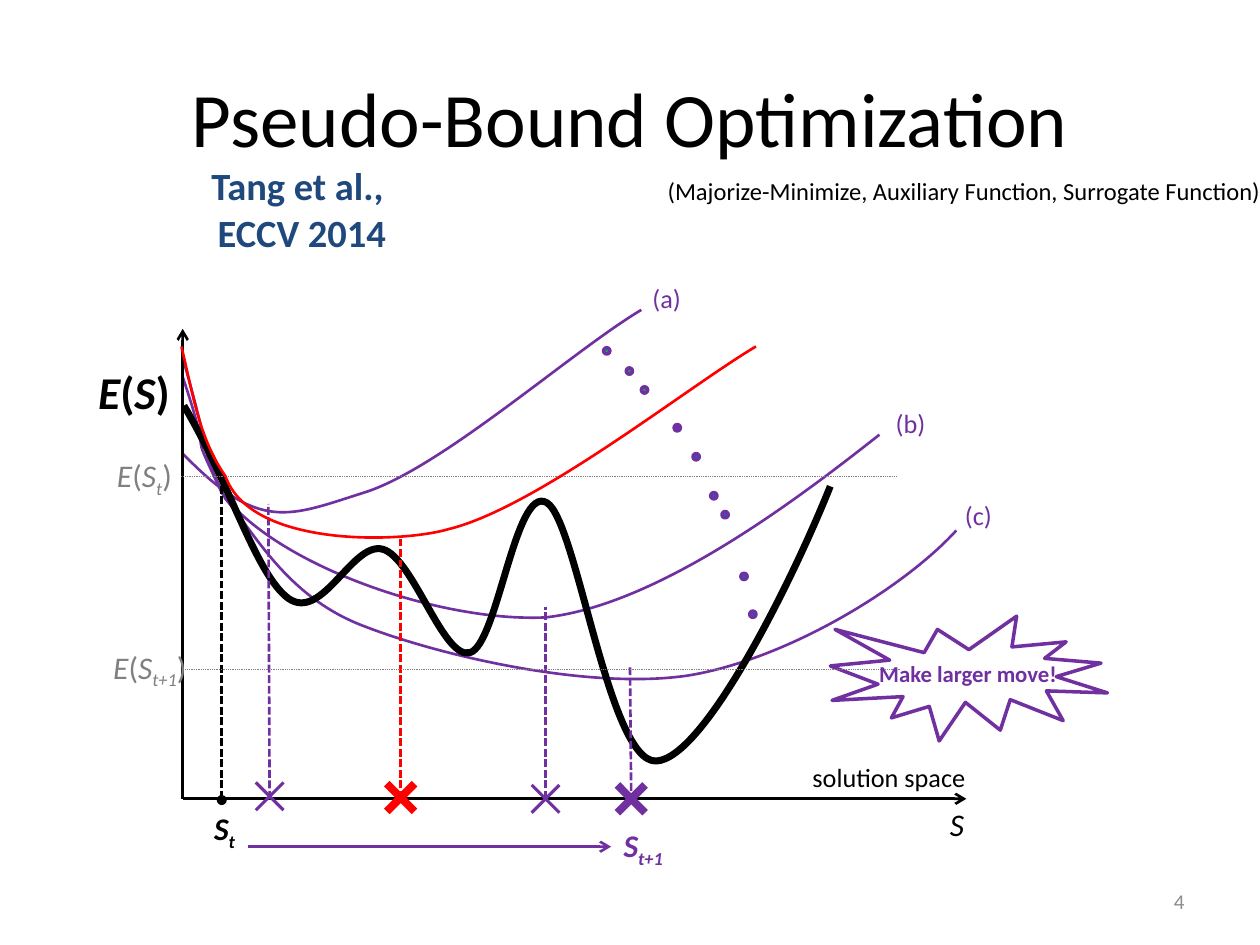
from dataclasses import dataclass

from lxml import etree
from pptx import Presentation
from pptx.dml.color import RGBColor
from pptx.enum.dml import MSO_LINE
from pptx.enum.shapes import MSO_CONNECTOR, MSO_SHAPE
from pptx.enum.text import MSO_ANCHOR, MSO_AUTO_SIZE, PP_ALIGN
from pptx.oxml.ns import qn
from pptx.util import Pt

PX = 9144  # 100 px to the inch
FONT = "Calibri"
BLACK, PURPLE, RED, GRAY = "000000", "7030A0", "FF0000", "808080"
GREEN, BLUE, NAVY, PALE = "00B050", "0070C0", "1F497D", "8C8C8C"
DASH, DOT = MSO_LINE.SQUARE_DOT, MSO_LINE.ROUND_DOT
STRAIGHT = MSO_CONNECTOR.STRAIGHT
OVAL, BURST = MSO_SHAPE.OVAL, MSO_SHAPE.EXPLOSION1
LEFT, CENTER, RIGHT = PP_ALIGN.LEFT, PP_ALIGN.CENTER, PP_ALIGN.RIGHT
TOP, MIDDLE = MSO_ANCHOR.TOP, MSO_ANCHOR.MIDDLE
GROW, FIXED = MSO_AUTO_SIZE.SHAPE_TO_FIT_TEXT, MSO_AUTO_SIZE.NONE
AXIS_Y = 634


@dataclass
class Run:
    text: str
    italic: bool = False
    subscript: bool = False


@dataclass
class Label:
    box: tuple[int, int, int, int]
    lines: list[list[Run]]
    size: int
    color: str = BLACK
    bold: bool = False
    align: PP_ALIGN = LEFT
    anchor: MSO_ANCHOR = TOP
    wrap: bool = False
    grow: bool = True


@dataclass
class Line:
    start: tuple[int, int]
    end: tuple[int, int]
    color: str
    width: float = 1.5
    dash: MSO_LINE | None = None
    arrow: bool = False


@dataclass
class Curve:
    points: list[tuple[int, int]]  # start, then three Bézier points a segment
    color: str
    width: float = 1.5


def rgb(color: str) -> RGBColor:
    return RGBColor.from_string(color)


def plain(text: str) -> list[list[Run]]:
    return [[Run(line)] for line in text.split("\n")]


def state(index: str) -> list[Run]:
    return [Run("S", True), Run(index, True, True)]


def energy(argument: list[Run]) -> list[list[Run]]:
    return [[Run("E", True), Run("("), *argument, Run(")")]]


def add_label(shapes, label: Label) -> None:
    shape = shapes.add_textbox(*(value * PX for value in label.box))
    frame = shape.text_frame
    frame.word_wrap = label.wrap
    frame.auto_size = GROW if label.grow else FIXED
    frame.vertical_anchor = label.anchor
    for index, runs in enumerate(label.lines):
        paragraph = frame.add_paragraph() if index else frame.paragraphs[0]
        paragraph.alignment = label.align
        font = paragraph.font
        font.name, font.size, font.bold = FONT, Pt(label.size), label.bold
        font.color.rgb = rgb(label.color)
        for part in runs:
            run = paragraph.add_run()
            run.text = part.text
            if part.italic:
                run.font.italic = True
            if part.subscript:
                run._r.get_or_add_rPr().set("baseline", "-25000")


def add_line(shapes, line: Line) -> None:
    ends = (value * PX for value in (*line.start, *line.end))
    connector = shapes.add_connector(STRAIGHT, *ends)
    connector.line.color.rgb = rgb(line.color)
    connector.line.width = Pt(line.width)
    if line.dash:
        connector.line.dash_style = line.dash
    if line.arrow:
        outline = connector.line._get_or_add_ln()
        etree.SubElement(outline, qn("a:tailEnd"), type="arrow")
    etree.SubElement(connector._element.spPr, qn("a:effectLst"))


def add_cross(shapes, x: int, y: int, color: str, width: float) -> None:
    half = 11
    for rise in (half, -half):
        add_line(shapes, Line((x - half, y - rise), (x + half, y + rise), color, width))


def add_curve(shapes, curve: Curve) -> None:
    builder = shapes.build_freeform(*curve.points[0], scale=PX)
    builder.add_line_segments(curve.points[1:], close=False)
    shape = builder.convert_to_shape()
    # Join each three straight segments into one cubic segment
    segments = list(shape._element.iter(qn("a:lnTo")))
    for first in range(0, len(segments), 3):
        cubic = etree.Element(qn("a:cubicBezTo"))
        segments[first].addprevious(cubic)
        for segment in segments[first:first + 3]:
            cubic.append(segment[0])
            segment.getparent().remove(segment)
    shape.shadow.inherit = False
    shape.fill.background()
    shape.line.color.rgb = rgb(curve.color)
    shape.line.width = Pt(curve.width)


def add_preset(shapes, kind: MSO_SHAPE, box: tuple[int, int, int, int],
               fill: str | None, outline: str | None) -> None:
    shape = shapes.add_shape(kind, *(value * PX for value in box))
    shape.shadow.inherit = False
    if fill:
        shape.fill.solid()
        shape.fill.fore_color.rgb = rgb(fill)
    else:
        shape.fill.background()
    if outline:
        shape.line.color.rgb = rgb(outline)
        shape.line.width = Pt(2)
    else:
        shape.line.fill.background()


HEADINGS = [
    Label((50, 30, 900, 125), plain("Pseudo-Bound Optimization"), 44,
          align=CENTER, anchor=MIDDLE, wrap=True, grow=False),
    Label((520, 135, 495, 34),
          plain("(Majorize-Minimize, Auxiliary Function, Surrogate Function)"), 14),
    Label((45, 124, 389, 83), plain("Tang et al., \nECCV 2014"), 22, NAVY, True,
          align=CENTER, wrap=True),
]
BOUNDS = [
    Curve([(145, 284), (173, 381), (155, 345), (179, 396), (203, 424), (228, 474), (289, 497),
           (351, 521), (469, 548), (547, 536), (625, 523), (717, 467), (759, 421)], PURPLE),
    Curve([(145, 360), (206, 423), (229, 410), (289, 391),
           (350, 372), (455, 278), (509, 246)], PURPLE),
    Curve([(145, 299), (173, 383), (145, 325), (176, 391), (218, 448), (348, 494), (433, 490),
           (524, 480), (637, 393), (698, 345)], PURPLE),
]
ENERGY_CURVE = Curve(
    [(146, 322), (183, 384), (203, 456), (229, 475), (256, 494), (280, 429), (304, 436),
     (328, 443), (352, 524), (373, 518), (395, 512), (409, 384), (434, 399),
     (458, 413), (483, 606), (521, 604), (559, 602), (629, 461), (659, 386)], BLACK, 4)
RED_BOUND = Curve([(144, 275), (153, 312), (158, 348), (179, 378), (199, 435), (319, 431),
                   (356, 420), (426, 403), (546, 307), (600, 275)], RED)
DOTS = [(479, 276, GREEN), (497, 292, GREEN), (509, 307, GREEN), (535, 337, PURPLE),
        (550, 360, BLUE), (564, 391, BLUE), (573, 406, BLUE), (588, 455, BLUE), (595, 485, BLUE)]
AXES = [Line((145, AXIS_Y), (767, AXIS_Y), BLACK, arrow=True),
        Line((145, AXIS_Y), (145, 261), BLACK, arrow=True)]
GUIDES = [
    Line((176, AXIS_Y), (176, 383), BLACK, dash=DASH),
    Line((214, AXIS_Y), (213, 400), PURPLE, dash=DASH),
    Line((501, 636), (500, 529), PURPLE, dash=DASH),
    Line((433, AXIS_Y), (433, 482), PURPLE, dash=DASH),
    Line((318, AXIS_Y), (318, 428), RED, dash=DASH),
    Line((144, 378), (712, 378), GRAY, 0.5, DOT),
    Line((147, 531), (715, 531), GRAY, 0.5, DOT),
    Line((197, 672), (485, 672), PURPLE, arrow=True),
]
CROSSES = [(214, 632, PURPLE, 1.75), (433, 634, PURPLE, 1.75),
           (318, 633, RED, 4.5), (501, 634, PURPLE, 4.5)]
LABELS = [
    Label((688, 519, 163, 32), plain("Make larger move!"), 13, PURPLE, True),
    Label((508, 219, 43, 35), plain("(a)"), 15, PURPLE),
    Label((701, 318, 44, 35), plain("(b)"), 15, PURPLE),
    Label((756, 391, 42, 35), plain("(c)"), 15, PURPLE),
    Label((634, 599, 143, 35), plain("solution space"), 15, align=CENTER),
    Label((744, 634, 32, 40), [[Run("S", True)]], 18),
    Label((160, 637, 38, 40), [state("t")], 18, bold=True),
    Label((485, 651, 55, 40), [state("t+1")], 18, PURPLE, True),
    Label((68, 284, 78, 54), energy([Run("S", True)]), 26, bold=True),
    Label((83, 357, 65, 40), energy(state("t")), 18, GRAY),
    Label((80, 509, 82, 40), energy(state("t+1")), 18, GRAY),
    Label((717, 695, 233, 40), plain("4"), 12, PALE,
          align=RIGHT, anchor=MIDDLE, wrap=True, grow=False),
]


def main() -> None:
    presentation = Presentation()
    presentation.slide_width, presentation.slide_height = 1000 * PX, 750 * PX
    shapes = presentation.slides.add_slide(presentation.slide_layouts[6]).shapes

    # Headings and callout
    for label in HEADINGS:
        add_label(shapes, label)
    add_preset(shapes, BURST, (659, 489, 220, 99), None, PURPLE)

    # Bounds, trail of dots, axes and energy
    for curve in BOUNDS:
        add_curve(shapes, curve)
    for x, y, fill in DOTS:
        add_preset(shapes, OVAL, (x, y, 5, 5), fill, PURPLE)
    for line in AXES:
        add_line(shapes, line)
    add_curve(shapes, ENERGY_CURVE)

    # Guides, minima and labels
    for line in GUIDES:
        add_line(shapes, line)
    add_preset(shapes, OVAL, (172, 631, 8, 8), BLACK, None)
    add_curve(shapes, RED_BOUND)
    for cross in CROSSES:
        add_cross(shapes, *cross)
    for label in LABELS:
        add_label(shapes, label)

    presentation.save("out.pptx")


if __name__ == "__main__":
    main()
